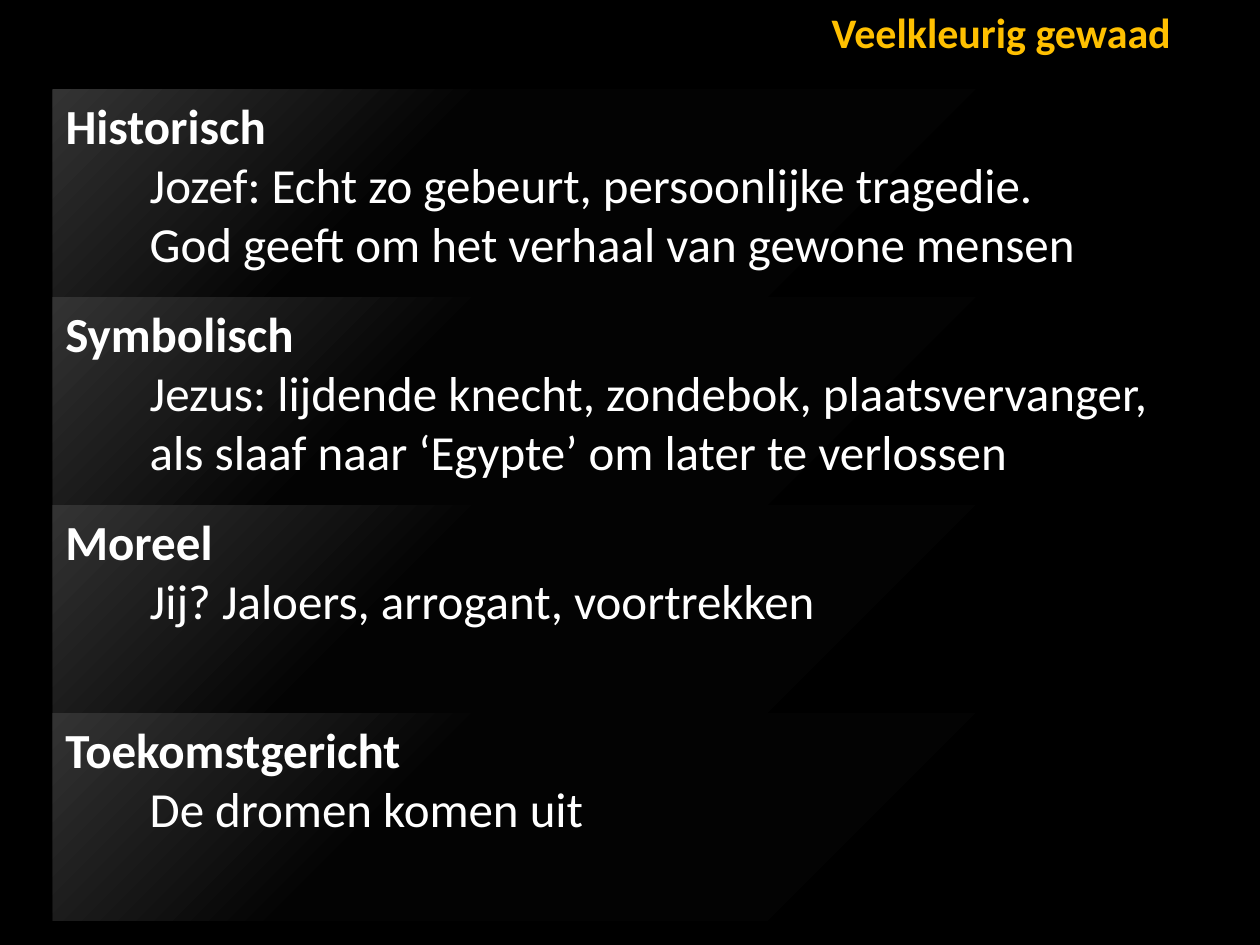
from copy import deepcopy
from dataclasses import dataclass

from pptx import Presentation
from pptx.dml.color import RGBColor
from pptx.enum.shapes import MSO_SHAPE
from pptx.enum.text import MSO_ANCHOR, MSO_AUTO_SIZE, PP_ALIGN
from pptx.oxml.ns import qn
from pptx.util import Inches, Pt


@dataclass(frozen=True)
class Theme:
    font: str = "Calibri"
    background: str = "000000"
    text: str = "FFFFFF"
    accent: str = "FFC000"
    panel_stops: tuple = ((0, "000000"), (0.69, "030303"), (1, "333333"))
    title_size: int = 24
    body_size: int = 28


@dataclass(frozen=True)
class Layer:
    heading: str
    details: tuple[str, ...]


THEME = Theme()
LAYERS = (
    Layer("Historisch", ("Jozef: Echt zo gebeurt, persoonlijke tragedie.",
                         "God geeft om het verhaal van gewone mensen")),
    # \v is a line break inside the paragraph
    Layer("Symbolisch", ("Jezus: lijdende knecht, zondebok, plaatsvervanger,\v"
                         "als slaaf naar ‘Egypte’ om later te verlossen",)),
    Layer("Moreel", ("Jij? Jaloers, arrogant, voortrekken",)),
    Layer("Toekomstgericht", ("De dromen komen uit",)),
)

# Inches: one column of equal rows, with details indented one line down
PANEL_LEFT, PANEL_WIDTH = 0.42, 9.53
FIRST_TOP, ROW_HEIGHT = 0.71, 1.65
DETAIL_LEFT, DETAIL_WIDTH = 1.09, 8.66
LINE_HEIGHT, DETAIL_HEIGHT = 0.47, 1.04


def place(shape, left: float, top: float, width: float, height: float) -> None:
    shape.left, shape.top = Inches(left), Inches(top)
    shape.width, shape.height = Inches(width), Inches(height)


def write(shape, *paragraphs: str, size: int = THEME.body_size,
          color: str = THEME.text, bold: bool = False, wrap: bool = True) -> None:
    """Fill the shape with left-aligned, top-anchored paragraphs."""
    frame = shape.text_frame
    frame.text = "\n".join(paragraphs)
    frame.word_wrap = wrap
    frame.auto_size = MSO_AUTO_SIZE.NONE
    frame.vertical_anchor = MSO_ANCHOR.TOP
    for paragraph in frame.paragraphs:
        paragraph.alignment = PP_ALIGN.LEFT
        paragraph.space_before = Pt(0)
        for run in paragraph.runs:
            run.font.name = THEME.font
            run.font.size = Pt(size)
            run.font.bold = bold
            run.font.color.rgb = RGBColor.from_string(color)


def remove_bullets(shape) -> None:
    for paragraph in shape.text_frame.paragraphs:
        properties = paragraph._p.get_or_add_pPr()
        properties.set("marL", "0")
        properties.set("indent", "0")
        properties.append(properties.makeelement(qn("a:buNone"), {}))


def fill_panel(shape) -> None:
    """Give the shape the theme's diagonal gradient, lightest at top left."""
    shape.fill.gradient()
    shape.fill.gradient_angle = 135
    stop_list = shape.element.spPr.find(qn("a:gradFill")).find(qn("a:gsLst"))
    stop_list.append(deepcopy(stop_list[0]))
    for stop, (position, color) in zip(shape.fill.gradient_stops, THEME.panel_stops):
        stop.position = position
        stop.color.rgb = RGBColor.from_string(color)
    shape.line.fill.background()


def add_panel(slide):
    panel = slide.shapes.add_shape(MSO_SHAPE.RECTANGLE, 0, 0, 0, 0)
    panel.shadow.inherit = False
    return panel


def draw_layer(slide, panel, layer: Layer, row: int) -> None:
    top = FIRST_TOP + row * ROW_HEIGHT
    place(panel, PANEL_LEFT, top, PANEL_WIDTH, ROW_HEIGHT)
    fill_panel(panel)
    write(panel, layer.heading, bold=True)
    details = slide.shapes.add_textbox(0, 0, 0, 0)
    place(details, DETAIL_LEFT, top + LINE_HEIGHT, DETAIL_WIDTH, DETAIL_HEIGHT)
    write(details, *layer.details)


def main() -> None:
    presentation = Presentation()
    presentation.slide_width, presentation.slide_height = Inches(10), Inches(7.5)
    slide = presentation.slides.add_slide(presentation.slide_layouts[1])
    slide.background.fill.solid()
    slide.background.fill.fore_color.rgb = RGBColor.from_string(THEME.background)

    title, body = slide.shapes.title, slide.placeholders[1]
    place(title, 6.5, 0, 3.5, 0.5)
    write(title, "Veelkleurig gewaad", size=THEME.title_size,
          color=THEME.accent, bold=True)

    for row, layer in enumerate(LAYERS):
        panel = body if row == 0 else add_panel(slide)
        draw_layer(slide, panel, layer, row)
    remove_bullets(body)

    presentation.save("out.pptx")


if __name__ == "__main__":
    main()
